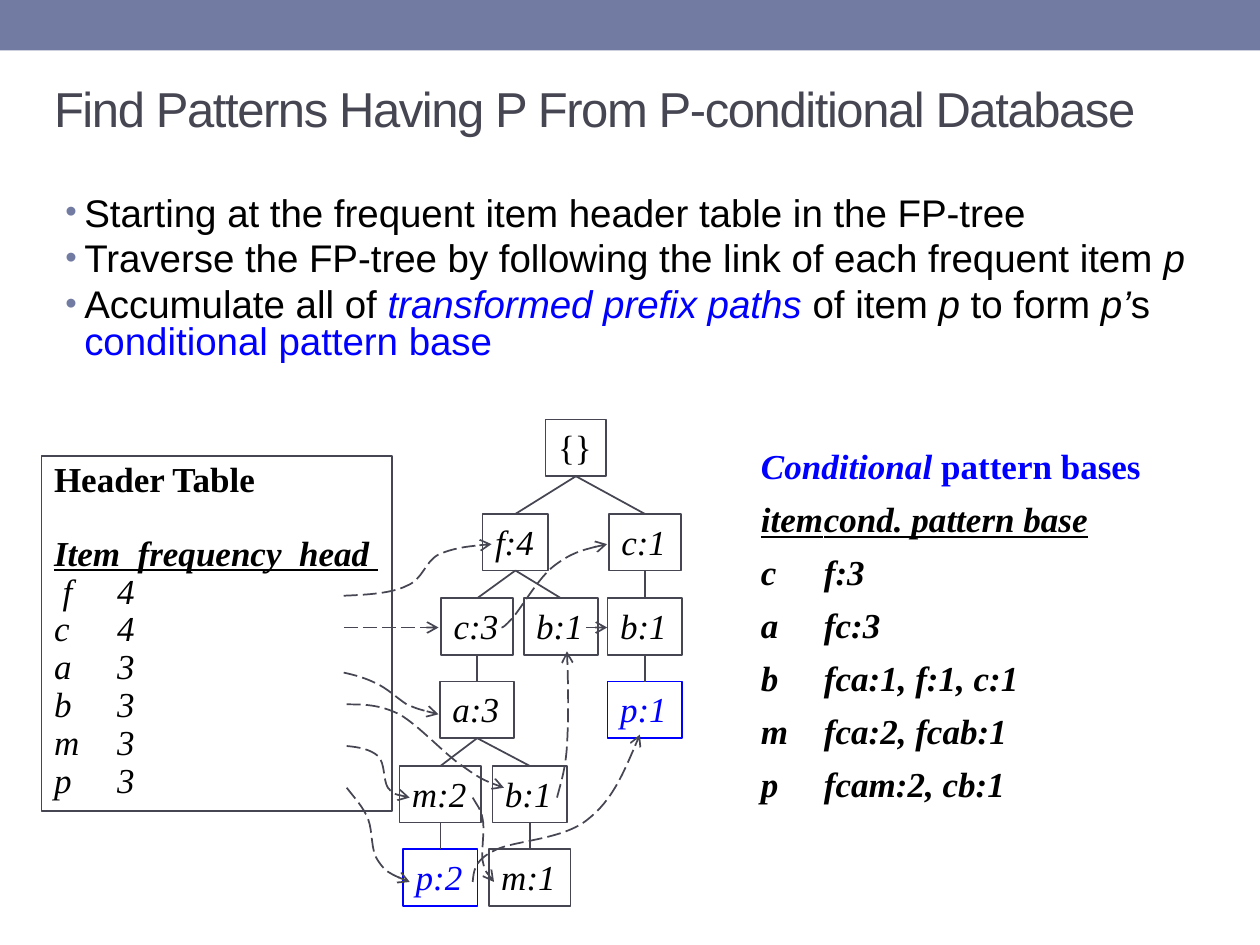
from typing import NamedTuple

from lxml import etree
from pptx import Presentation
from pptx.dml.color import RGBColor
from pptx.enum.dml import MSO_LINE
from pptx.enum.shapes import MSO_CONNECTOR, MSO_SHAPE
from pptx.enum.text import MSO_ANCHOR
from pptx.oxml.ns import qn
from pptx.util import Cm, Pt

LONG_DASH = MSO_LINE.LONG_DASH
STRAIGHT = MSO_CONNECTOR.STRAIGHT
RECTANGLE = MSO_SHAPE.RECTANGLE
MIDDLE = MSO_ANCHOR.MIDDLE

COLORS = {"bar": "727CA3", "slate": "464653", "black": "000000", "blue": "0000FF"}
SANS, SERIF = "Arial", "Times New Roman"
LEVEL_TOPS = [8.46, 10.36, 12.06, 13.74, 15.44, 17.12]
NODE_HEIGHT = 1.14


class Node(NamedTuple):
    label: str
    level: int
    center: float
    width: float
    parent: int | None
    color: str = "black"


class Span(NamedTuple):
    text: str
    color: str = "black"
    bold: bool = False
    italic: bool = False
    underline: bool = False


# Each node names its parent by index
TREE = [
    Node("{}", 0, 11.61, 1.22, None),
    Node("f:4", 1, 10.39, 1.32, 0),
    Node("c:1", 1, 13.0, 1.45, 0),
    Node("b:1", 2, 13.0, 1.5, 2),
    Node("p:1", 3, 13.0, 1.5, 3, "blue"),
    Node("b:1", 2, 11.31, 1.5, 1),
    Node("c:3", 2, 9.62, 1.45, 1),
    Node("a:3", 3, 9.62, 1.5, 6),
    Node("b:1", 4, 10.68, 1.5, 7),
    Node("m:2", 4, 8.88, 1.65, 7),
    Node("p:2", 5, 8.88, 1.5, 9, "blue"),
    Node("m:1", 5, 10.68, 1.65, 8),
]

# Node links: a start point, then two control points and an end per curve
CURVED_LINKS = [
    [(6.93, 12.01), (7.42, 11.99), (7.9, 11.96), (8.2, 11.81), (8.53, 11.68),
     (8.56, 11.33), (8.84, 11.18), (9.14, 11.05), (9.53, 11), (9.91, 10.97)],
    [(10.11, 12.65), (10.13, 12.65), (10.16, 12.65), (10.34, 12.45), (10.52, 12.24),
     (10.87, 11.63), (11.18, 11.4), (11.51, 11.15), (11.86, 11.05), (12.24, 10.97)],
    [(6.93, 13.56), (7.16, 13.61), (7.37, 13.67), (7.57, 13.77), (7.8, 13.87),
     (8, 14.07), (8.2, 14.2), (8.43, 14.3), (8.64, 14.35), (8.84, 14.4)],
    [(6.99, 14.2), (7.32, 14.2), (7.65, 14.2), (8.05, 14.4), (8.43, 14.61),
     (8.97, 15.21), (9.32, 15.44), (9.68, 15.7), (9.91, 15.8), (10.16, 15.88)],
    [(11.23, 16.08), (11.3, 15.8), (11.4, 15.52), (11.43, 15.04),
     (11.46, 14.53), (11.46, 13.84), (11.43, 13.13)],
    [(6.99, 15.04), (7.24, 15.06), (7.47, 15.11), (7.62, 15.24), (7.77, 15.39),
     (7.72, 15.72), (7.82, 15.88), (7.95, 16.03), (8.1, 16.05), (8.26, 16.08)],
    [(9.53, 16.08), (9.6, 16.21), (9.7, 16.31), (9.73, 16.51), (9.78, 16.71),
     (9.7, 17.15), (9.73, 17.35), (9.78, 17.58), (9.86, 17.68), (9.96, 17.78)],
    [(6.99, 15.88), (7.14, 16.08), (7.32, 16.26), (7.42, 16.51), (7.52, 16.76),
     (7.47, 17.15), (7.62, 17.35), (7.77, 17.58), (8, 17.68), (8.26, 17.78)],
    [(9.53, 17.78), (9.55, 17.58), (9.55, 17.35), (9.96, 17.15), (10.34, 16.94),
     (11.35, 16.94), (11.86, 16.51), (12.34, 16.13), (12.62, 15.47), (12.9, 14.81)],
]
STRAIGHT_LINKS = [((6.93, 12.65), (8.84, 12.65)), ((11.81, 12.65), (12.24, 12.65))]

STEPS = [
    [Span("Starting at the frequent item header table in the FP-tree")],
    [Span("Traverse the FP-tree by following the link of each frequent item "),
     Span("p", italic=True)],
    [Span("Accumulate all of "), Span("transformed prefix paths ", "blue", italic=True),
     Span("of item "), Span("p ", italic=True), Span("to form "),
     Span("p’", italic=True), Span("s "), Span("conditional pattern base", "blue")],
]
FREQUENCIES = [(" f", 4), ("c", 4), ("a", 3), ("b", 3), ("m", 3), ("p", 3)]
PATTERN_BASES = [("c", "f:3"), ("a", "fc:3"), ("b", "fca:1, f:1, c:1"),
                 ("m", "fca:2, fcab:1"), ("p", "fcam:2, cb:1")]


def rgb(name: str) -> RGBColor:
    return RGBColor.from_string(COLORS[name])


def style_line(shape, color: str = "slate", arrow: bool = False) -> None:
    shape.line.color.rgb = rgb(color)
    shape.line.width = Pt(1)
    if arrow:
        shape.line.dash_style = LONG_DASH
        etree.SubElement(shape.line._get_or_add_ln(), qn("a:tailEnd"), type="arrow")


def add_text(slide, box: tuple, lines: list[list[Span]], font: str, size: float,
             spacing: float = 1, before: float = 0, wrap: bool = True):
    text_box = slide.shapes.add_textbox(*map(Cm, box))
    frame = text_box.text_frame
    frame.word_wrap = wrap
    for number, spans in enumerate(lines):
        paragraph = frame.add_paragraph() if number else frame.paragraphs[0]
        paragraph.line_spacing = spacing
        paragraph.space_before = Pt(before)
        for span in spans:
            run = paragraph.add_run()
            run.text = span.text
            run.font.name, run.font.size = font, Pt(size)
            run.font.color.rgb = rgb(span.color)
            run.font.bold, run.font.italic = span.bold, span.italic
            run.font.underline = span.underline
    return text_box


def add_bullet(paragraph) -> None:
    properties = paragraph._p.get_or_add_pPr()
    properties.set("marL", str(Cm(0.38)))
    properties.set("indent", str(-Cm(0.38)))
    color = etree.SubElement(properties, qn("a:buClr"))
    etree.SubElement(color, qn("a:srgbClr"), val=COLORS["bar"])
    etree.SubElement(properties, qn("a:buSzPct"), val="85000")
    etree.SubElement(properties, qn("a:buFont"), typeface=SANS)
    etree.SubElement(properties, qn("a:buChar"), char="•")


def add_line(slide, start: tuple, end: tuple, arrow: bool = False) -> None:
    line = slide.shapes.add_connector(STRAIGHT, *map(Cm, start + end))
    style_line(line, arrow=arrow)
    etree.SubElement(line._element.spPr, qn("a:effectLst"))


def add_curve(slide, points: list[tuple]) -> None:
    start, *rest = [(Cm(x), Cm(y)) for x, y in points]
    builder = slide.shapes.build_freeform(*start)
    builder.add_line_segments(rest, close=False)
    curve = builder.convert_to_shape()
    curve.shadow.inherit = False
    curve.fill.background()
    style_line(curve, arrow=True)
    # Every three straight segments become one cubic curve
    segments = list(curve._element.iter(qn("a:lnTo")))
    outline = segments[0].getparent()
    for first in range(0, len(segments), 3):
        cubic = etree.SubElement(outline, qn("a:cubicBezTo"))
        for segment in segments[first:first + 3]:
            cubic.append(segment[0])
            outline.remove(segment)


def add_node(slide, node: Node) -> None:
    top = LEVEL_TOPS[node.level]
    box = (node.center - node.width / 2, top, node.width, NODE_HEIGHT)
    label = Span(node.label, node.color, italic=node.parent is not None)
    shape = add_text(slide, box, [[label]], SERIF, 20, wrap=False)
    style_line(shape, "blue" if node.color == "blue" else "slate")
    if node.parent is not None:
        parent = TREE[node.parent]
        bottom = LEVEL_TOPS[parent.level] + NODE_HEIGHT
        add_line(slide, (parent.center, bottom), (node.center, top))


def main() -> None:
    prs = Presentation()
    prs.slide_width, prs.slide_height = Cm(25.4), Cm(19.05)
    slide = prs.slides.add_slide(prs.slide_layouts[6])

    # Top bar and title
    bar = slide.shapes.add_shape(RECTANGLE, 0, 0, prs.slide_width, Cm(1.02))
    bar.shadow.inherit = False
    bar.fill.solid()
    bar.fill.fore_color.rgb = rgb("bar")
    bar.line.fill.background()
    heading = Span("Find Patterns Having P From P-conditional Database", "slate")
    title = add_text(slide, (0.84, 1.3, 25.4, 1.9), [[heading]], SANS, 28, 0.9)
    title.text_frame.vertical_anchor = MIDDLE
    title.text_frame.paragraphs[0].runs[0].font._element.set("spc", "-80")

    # Steps
    steps = add_text(slide, (1.07, 3.86, 23.29, 4.39), STEPS, SANS, 22, 0.8, 5)
    for paragraph in steps.text_frame.paragraphs:
        add_bullet(paragraph)

    # Conditional pattern bases
    bases = [[Span("Conditional ", "blue", True, True), Span("pattern bases", "blue", True)],
             [Span("item\tcond. pattern base", "black", True, True, True)]]
    bases += [[Span(f"{item}\t{base}", "black", True, True)] for item, base in PATTERN_BASES]
    listing = add_text(slide, (15.09, 8.84, 9.25, 7.72), bases, SERIF, 20, 0.8, 11)
    listing.text_frame.paragraphs[0].line_spacing = 1

    # FP-tree
    for node in TREE:
        add_node(slide, node)

    # Header table
    rows = [[Span("Header Table", bold=True)],
            [Span("Item  frequency  head ", "black", True, True, True)]]
    rows += [[Span(f"{item}\t{count}", italic=True)] for item, count in FREQUENCIES]
    header = add_text(slide, (0.84, 9.19, 7.06, 7.16), rows, SERIF, 20, 0.9, wrap=False)
    header.text_frame.paragraphs[1].space_before = Pt(20.7)
    style_line(header)

    # Node links
    for points in CURVED_LINKS:
        add_curve(slide, points)
    for start, end in STRAIGHT_LINKS:
        add_line(slide, start, end, arrow=True)

    prs.save("out.pptx")


if __name__ == "__main__":
    main()
